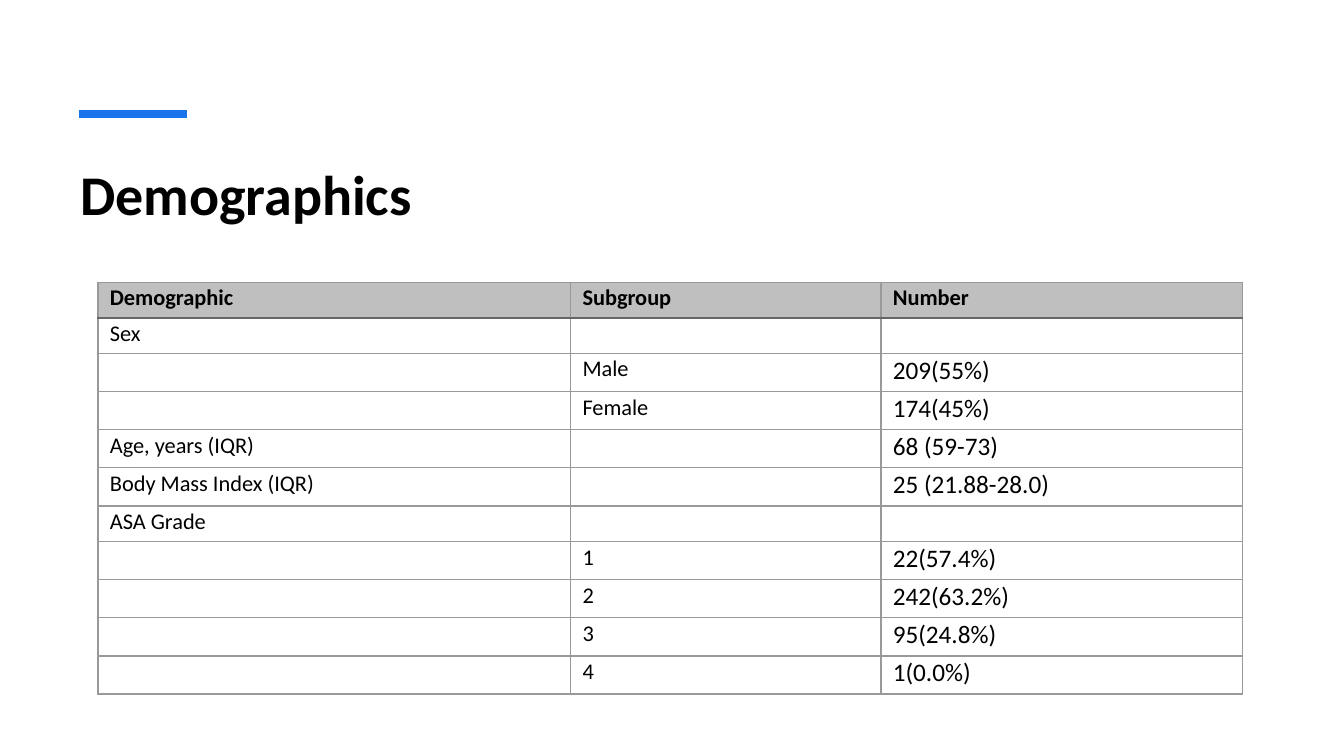
"""Build the demographics slide with its patient table."""
from dataclasses import dataclass

from lxml import etree
from pptx import Presentation
from pptx.dml.color import RGBColor
from pptx.enum import shapes, text
from pptx.oxml import ns
from pptx.util import Cm, Pt

BLACK = RGBColor(0x00, 0x00, 0x00)
WHITE = RGBColor(0xFF, 0xFF, 0xFF)
BLUE = RGBColor(0x19, 0x73, 0xEB)
HEADER_GREY = RGBColor(0xBF, 0xBF, 0xBF)
GRID_GREY = RGBColor(0x99, 0x99, 0x99)
RULE_GREY = RGBColor(0x66, 0x66, 0x66)

COLUMN_WIDTHS = (11.91, 7.82, 9.12)
ROW_HEIGHT, SHORT_ROW_HEIGHT = 0.96, 0.9
CELL_FORMAT = {
    "margin_left": Cm(0.3),
    "margin_right": Cm(0.3),
    "margin_top": Cm(0.05),
    "margin_bottom": Cm(0),
    "vertical_anchor": text.MSO_ANCHOR.TOP,
}
TITLE_FORMAT = {
    "word_wrap": True,
    "vertical_anchor": text.MSO_ANCHOR.TOP,
    "margin_top": Cm(0.2),
}


@dataclass(frozen=True)
class Record:
    """One table row."""
    demographic: str = ""
    subgroup: str = ""
    number: str = ""


HEADER = Record("Demographic", "Subgroup", "Number")
RECORDS = (
    HEADER,
    Record("Sex"),
    Record(subgroup="Male", number="209(55%)"),
    Record(subgroup="Female", number="174(45%)"),
    Record("Age, years (IQR)", number="68 (59-73)"),
    Record("Body Mass Index (IQR)", number="25 (21.88-28.0)"),
    Record("ASA Grade"),
    Record(subgroup="1", number="22(57.4%)"),
    Record(subgroup="2", number="242(63.2%)"),
    Record(subgroup="3", number="95(24.8%)"),
    Record(subgroup="4", number="1(0.0%)"),
)


def apply_format(target, values: dict) -> None:
    """Set every attribute listed in values."""
    for name, value in values.items():
        setattr(target, name, value)


def write(para, wording: str, size: float, bold: bool) -> None:
    """Add a black Calibri span to a paragraph."""
    span = para.add_run()
    span.text = wording
    apply_format(span.font, {"name": "Calibri", "size": Pt(size), "bold": bold})
    span.font.color.rgb = BLACK


def set_border(cell, side: str, color: RGBColor, width: float) -> None:
    """Draw one edge of a cell."""
    edge = etree.Element(ns.qn(f"a:ln{side}"), w=str(Pt(width)))
    fill = etree.SubElement(edge, ns.qn("a:solidFill"))
    etree.SubElement(fill, ns.qn("a:srgbClr"), val=str(color))
    properties = cell._tc.get_or_add_tcPr()
    position = len(properties.findall("*")) - 1
    properties.insert(position, edge)


def draw_title(page) -> None:
    """Add the accent line and the title."""
    accent = page.shapes.add_connector(
        shapes.MSO_CONNECTOR.STRAIGHT, Cm(1.98), Cm(2.87), Cm(4.7), Cm(2.87))
    accent.line.color.rgb = BLUE
    accent.line.width = Pt(6)
    etree.SubElement(accent._element.spPr, ns.qn("a:effectLst"))
    box = page.shapes.add_textbox(Cm(1.78), Cm(3.81), Cm(30.25), Cm(3.05))
    apply_format(box.text_frame, TITLE_FORMAT)
    write(box.text_frame.paragraphs[0], "Demographics", 40, True)


def draw_cell(cell, wording: str, row: int, column: int) -> None:
    """Fill, frame and letter one table cell."""
    is_header = row == 0
    apply_format(cell, CELL_FORMAT)
    cell.fill.solid()
    cell.fill.fore_color.rgb = HEADER_GREY if is_header else WHITE
    for side in "LRTB":
        is_rule = (row, side) in ((0, "B"), (1, "T"))
        set_border(cell, side, *((RULE_GREY, 1.5) if is_rule else (GRID_GREY, 1)))
    if wording:
        size = 18 if column == 2 and not is_header else 16
        write(cell.text_frame.paragraphs[0], wording, size, is_header)


def draw_table(page) -> None:
    """Add the demographics table."""
    heights = [ROW_HEIGHT if record.number and record != HEADER
               else SHORT_ROW_HEIGHT for record in RECORDS]
    table = page.shapes.add_table(
        len(RECORDS), len(COLUMN_WIDTHS), Cm(2.47), Cm(7.11),
        Cm(sum(COLUMN_WIDTHS)), Cm(sum(heights))).table
    apply_format(table, {"first_row": False, "horz_banding": False})
    for column, width in zip(table.columns, COLUMN_WIDTHS):
        column.width = Cm(width)
    for row, (record, height) in enumerate(zip(RECORDS, heights)):
        table.rows[row].height = Cm(height)
        wordings = (record.demographic, record.subgroup, record.number)
        for column, wording in enumerate(wordings):
            draw_cell(table.cell(row, column), wording, row, column)


def main() -> None:
    """Build and save the deck."""
    deck = Presentation()
    apply_format(deck, {"slide_width": Cm(33.87), "slide_height": Cm(19.05)})
    page = deck.slides.add_slide(deck.slide_layouts[6])
    draw_title(page)
    draw_table(page)
    deck.save("out.pptx")


if __name__ == "__main__":
    main()
